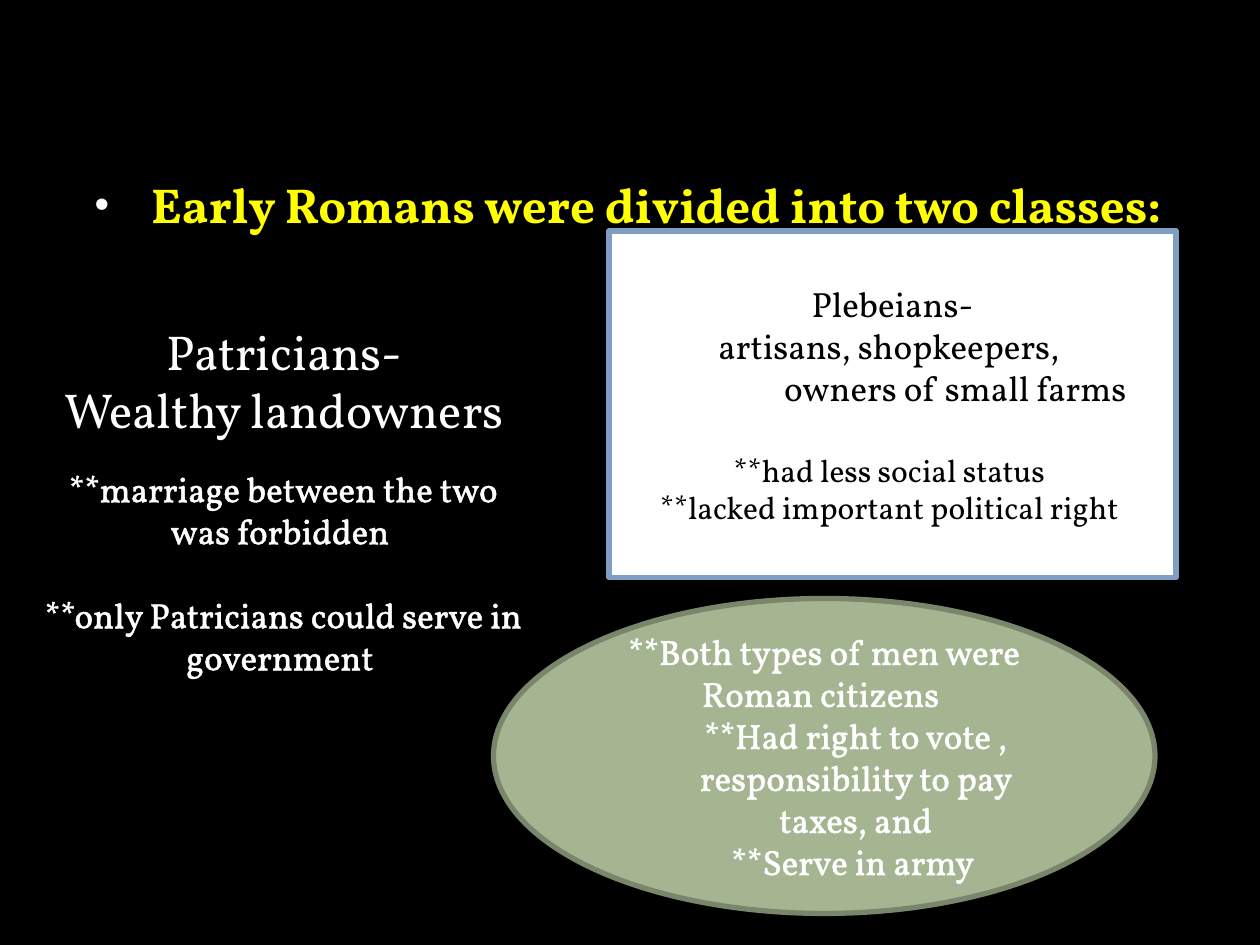
from dataclasses import dataclass
from lxml import etree
from pptx import Presentation
from pptx.dml.color import RGBColor
from pptx.enum.shapes import MSO_SHAPE
from pptx.enum.text import MSO_ANCHOR, MSO_AUTO_SIZE, PP_ALIGN
from pptx.oxml import parse_xml
from pptx.oxml.ns import nsdecls, qn
from pptx.util import Inches, Pt

RECTANGLE, OVAL = MSO_SHAPE.RECTANGLE, MSO_SHAPE.OVAL
TOP, MIDDLE = MSO_ANCHOR.TOP, MSO_ANCHOR.MIDDLE
LEFT, CENTER = PP_ALIGN.LEFT, PP_ALIGN.CENTER
NO_FIT, GROW = MSO_AUTO_SIZE.NONE, MSO_AUTO_SIZE.SHAPE_TO_FIT_TEXT


@dataclass(frozen=True)
class Theme:
    font: str = "Vollkorn"
    black: str = "000000"
    white: str = "FFFFFF"
    yellow: str = "FFFF00"
    bullet: str = "F9F9F9"
    blue: str = "809EC2"
    green: str = "A5B592"
    moss: str = "7A866C"
    large: int = 28
    medium: int = 20
    small: int = 18
    border: float = 3
    stroke: float = 1.45
    line_gap: float = 24


THEME = Theme()
WIDTH, HEIGHT = Inches(10), Inches(7.5)
COLUMNS, ROWS = 120, 90

HEADING = "Early Romans were divided into two classes:"
HEADING_CELLS = (6, 16, 108, 7)
PATRICIANS = [
    {"text": "Patricians- ", "size": THEME.large},
    {"text": "Wealthy landowners ", "size": THEME.large},
]
PATRICIANS_CELLS = (4, 30, 47, 12.5)

PANELS = [
    {"shape": RECTANGLE, "cells": (3, 28, 48, 53), "fill": THEME.black,
     "line": THEME.black, "color": THEME.white, "stroked": True,
     "lines": [
         {"text": "**marriage between the two was forbidden "},
         {"text": "**only Patricians could serve in government ", "before": THEME.line_gap},
     ]},
    {"shape": RECTANGLE, "cells": (58, 22, 54, 33), "fill": THEME.white,
     "line": THEME.blue, "color": THEME.black, "stroked": False,
     "lines": [
         {"text": "Plebeians-"},
         {"text": "artisans, shopkeepers, "},
         {"text": "owners of small farms", "indent": 1},
         {"text": "**had less social status ", "size": THEME.small, "before": THEME.line_gap},
         {"text": "**lacked important political right ", "size": THEME.small},
     ]},
    {"shape": OVAL, "cells": (47, 57, 63, 30), "fill": THEME.green,
     "line": THEME.moss, "color": THEME.white, "stroked": True,
     "lines": [
         {"text": "**Both types of men were Roman citizens "},
         {"text": "**Had right to vote , responsibility to pay taxes, and", "indent": 0.5},
         {"text": "**Serve in army ", "indent": 0.5},
     ]},
]


def place(cells):
    left, top, width, height = cells
    return (int(WIDTH * left / COLUMNS), int(HEIGHT * top / ROWS),
            int(WIDTH * width / COLUMNS), int(HEIGHT * height / ROWS))


def style_span(span, size, color, bold=False):
    span.font.name = THEME.font
    span.font.size = Pt(size)
    span.font.bold = bold
    span.font.color.rgb = RGBColor.from_string(color)


def stroke_span(span, color):
    outline = parse_xml(
        f'<a:ln {nsdecls("a")} w="{int(Pt(THEME.stroke))}"><a:solidFill>'
        f'<a:srgbClr val="{color}"/></a:solidFill></a:ln>')
    span.font._element.insert(0, outline)


def indent_para(para, left, first=0):
    properties = para._p.get_or_add_pPr()
    properties.set("marL", str(int(Inches(left))))
    properties.set("indent", str(int(Inches(first))))
    return properties


def write_lines(frame, lines, color, stroked=False):
    frame.text = "\n".join(line["text"] for line in lines)
    for para, line in zip(frame.paragraphs, lines):
        para.alignment = CENTER
        if "indent" in line:
            indent_para(para, line["indent"])
        if "before" in line:
            para.space_before = Pt(line["before"])
        for span in para.runs:
            style_span(span, line.get("size", THEME.medium), color)
            if stroked:
                stroke_span(span, color)


def add_heading(page):
    box = page.shapes.title
    box.left, box.top, box.width, box.height = place(HEADING_CELLS)
    frame = box.text_frame
    frame.text = HEADING
    frame.vertical_anchor = TOP
    frame.auto_size = NO_FIT
    para = frame.paragraphs[0]
    para.alignment = LEFT
    para.space_before = Pt(6)
    properties = indent_para(para, 0.6, -0.45)
    bullet_color = etree.SubElement(properties, qn("a:buClr"))
    etree.SubElement(bullet_color, qn("a:srgbClr"), val=THEME.bullet)
    etree.SubElement(properties, qn("a:buSzPct"), val="85000")
    etree.SubElement(properties, qn("a:buFont"), typeface="Arial")
    etree.SubElement(properties, qn("a:buChar"), char="•")
    style_span(para.runs[0], THEME.large, THEME.yellow, bold=True)


def add_panel(page, panel):
    box = page.shapes.add_shape(panel["shape"], *place(panel["cells"]))
    box.shadow.inherit = False
    box.fill.solid()
    box.fill.fore_color.rgb = RGBColor.from_string(panel["fill"])
    box.line.color.rgb = RGBColor.from_string(panel["line"])
    box.line.width = Pt(THEME.border)
    box.text_frame.word_wrap = True
    box.text_frame.vertical_anchor = MIDDLE
    write_lines(box.text_frame, panel["lines"], panel["color"], panel["stroked"])


def add_patricians(page):
    box = page.shapes.add_textbox(*place(PATRICIANS_CELLS))
    box.text_frame.word_wrap = False
    box.text_frame.auto_size = GROW
    write_lines(box.text_frame, PATRICIANS, THEME.white)


def main():
    deck = Presentation()
    deck.slide_width, deck.slide_height = WIDTH, HEIGHT
    page = deck.slides.add_slide(deck.slide_layouts[5])
    page.background.fill.solid()
    page.background.fill.fore_color.rgb = RGBColor.from_string(THEME.black)
    add_heading(page)
    patricians_panel, *class_panels = PANELS
    add_panel(page, patricians_panel)
    add_patricians(page)
    for panel in class_panels:
        add_panel(page, panel)
    deck.save("out.pptx")


if __name__ == "__main__":
    main()
